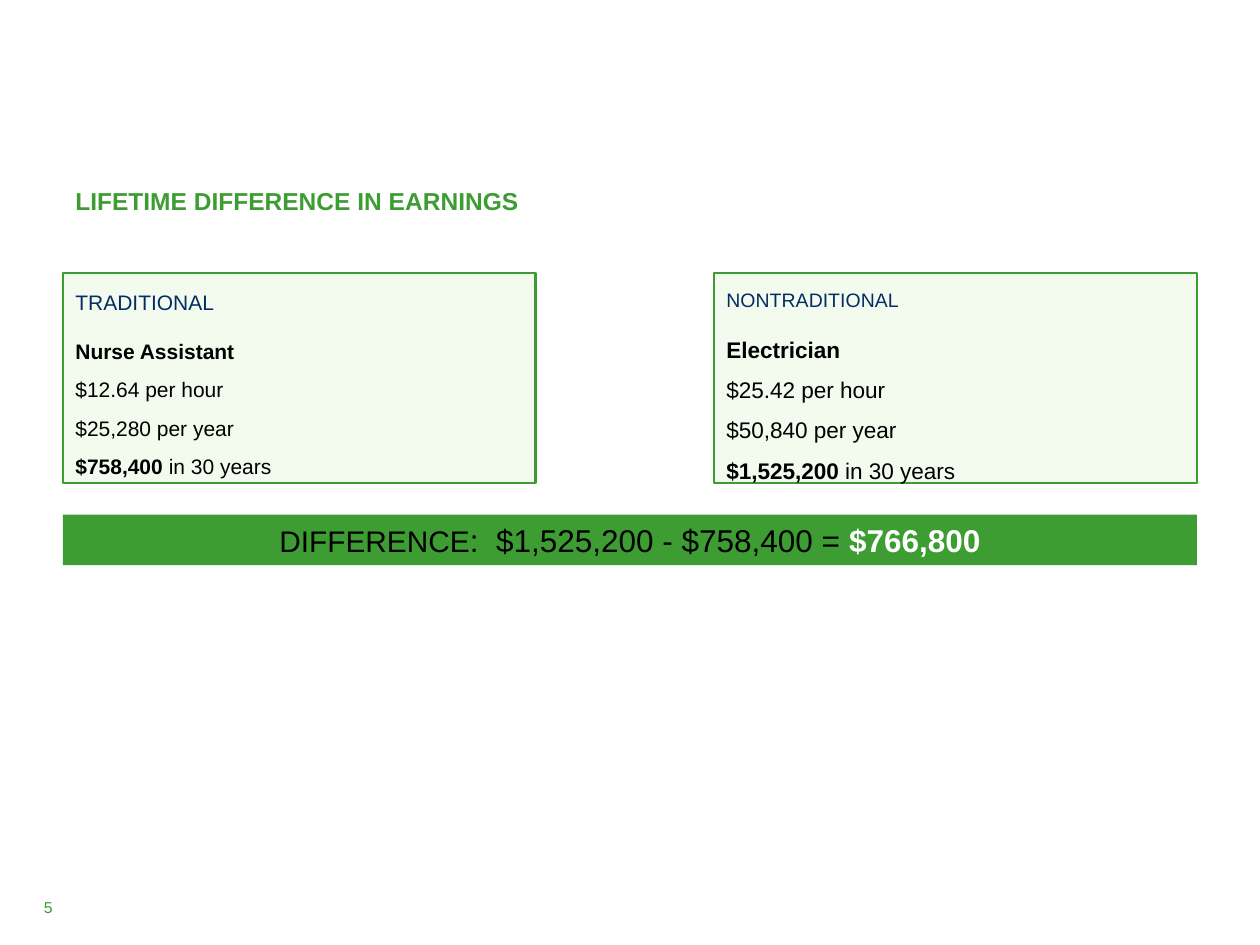
"""Build the slide on lifetime difference in earnings."""
from pptx import Presentation
from pptx.dml.color import RGBColor as RGB
from pptx.enum.shapes import MSO_SHAPE as SHAPE
from pptx.enum.text import MSO_ANCHOR as ANCHOR, PP_ALIGN as ALIGN
from pptx.util import Pt

GREEN = RGB(0x3D, 0x9D, 0x33)
PALE = RGB(0xF2, 0xFB, 0xEE)
NAVY = RGB(0x06, 0x2C, 0x65)
BLACK = RGB(0, 0, 0)
WHITE = RGB(255, 255, 255)

deck = Presentation()
deck.slide_width, deck.slide_height = Pt(720), Pt(540)
slide = deck.slides.add_slide(deck.slide_layouts[6])


def add_box(place, fill=None, edge=None, anchor=ANCHOR.TOP):
    spot = [Pt(v) for v in place]
    if fill is None:
        box = slide.shapes.add_textbox(*spot)
    else:
        box = slide.shapes.add_shape(SHAPE.RECTANGLE, *spot)
        box.shadow.inherit = False
        box.fill.solid()
        box.fill.fore_color.rgb = fill
        if edge is None:
            box.line.fill.background()
        else:
            box.line.color.rgb = edge
            box.line.width = Pt(1.5)
    frame = box.text_frame
    frame.word_wrap = True
    frame.vertical_anchor = anchor
    return frame


def add_text(para, runs, **form):
    form = {"alignment": ALIGN.LEFT, **form}
    for name, value in form.items():
        setattr(para, name, value)
    for text, size, color, bold in runs:
        run = para.add_run()
        run.text = text
        look = {"name": "Arial", "size": Pt(size), "bold": bold}
        for name, value in look.items():
            setattr(run.font, name, value)
        run.font.color.rgb = color


page = add_box((18, 504, 36, 29), anchor=ANCHOR.MIDDLE)
add_text(page.paragraphs[0], [("5", 9, GREEN, False)])

title = add_box((36, 96, 648, 36))
add_text(title.paragraphs[0],
         [("LIFETIME DIFFERENCE IN EARNINGS", 14, GREEN, True)],
         line_spacing=1.4, space_after=Pt(6))

cards = [
    (36, 270, "TRADITIONAL", 12, 12, "Nurse Assistant",
     "$12.64", "$25,280", "$758,400"),
    (408, 276, "NONTRADITIONAL", 11.1, 12.9, "Electrician",
     "$25.42", "$50,840", "$1,525,200"),
]
for left, width, head, big, size, job, hour, year, total in cards:
    card = add_box((left, 156, width, 120), PALE, GREEN)
    add_text(card.paragraphs[0], [(head, big, NAVY, False)],
             line_spacing=1.4, space_after=Pt(6))
    lines = [
        [(job, True)],
        [(f"{hour} per hour", False)],
        [(f"{year} per year", False)],
        [(f"{total} ", True), ("in 30 years", False)],
    ]
    for line in lines:
        runs = [(text, size, BLACK, bold) for text, bold in line]
        add_text(card.add_paragraph(), runs, space_before=Pt(7.6))

band = add_box((36, 294, 648, 29), GREEN)
add_text(band.paragraphs[0], [
    ("DIFFERENCE", 17, BLACK, False),
    (":  $1,525,200 - $758,400 = ", 18, BLACK, False),
    ("$766,800", 18, WHITE, True),
], alignment=ALIGN.CENTER)

deck.save("out.pptx")
